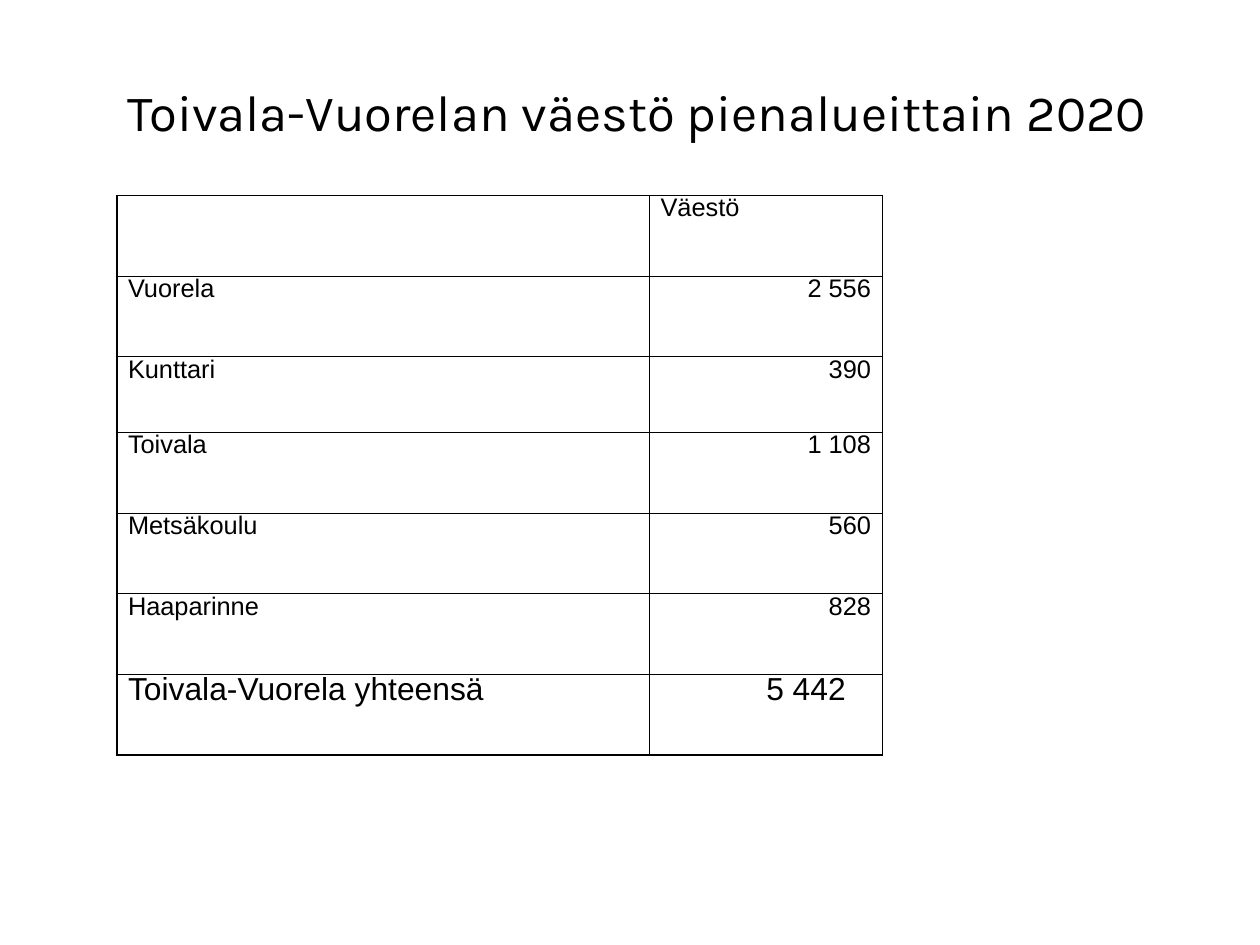
from dataclasses import dataclass

import lxml.etree
import pptx
import pptx.dml.color
import pptx.enum.text
import pptx.oxml.ns
import pptx.util

ALIGN = pptx.enum.text.PP_ALIGN
ANCHOR = pptx.enum.text.MSO_ANCHOR


@dataclass(frozen=True)
class Theme:
    ink: str = "000000"
    paper: str = "FFFFFF"
    title_font: str = "Karla"
    table_font: str = "Arial"
    title_size: int = 32
    row_size: int = 16
    total_size: int = 20
    border_width: float = 0.75
    outer_width: float = 1.5


THEME = Theme()
SLIDE_WIDTH = pptx.util.Cm(28)
SLIDE_HEIGHT = pptx.util.Cm(21)
LEFT = 1.02
TITLE_TOP, TITLE_WIDTH, TITLE_HEIGHT = 0.33, 9.92, 1.38
TABLE_TOP, TABLE_HEIGHT = TITLE_TOP + TITLE_HEIGHT, 4.9
COLUMNS = (4.66, 2.04)
SHORT_ROW, SHORT_ROW_HEIGHT = 2, 0.66
TOTAL_INDENT = 0.32

POPULATION = (
    ("", "Väestö"),
    ("Vuorela", "2 556"),
    ("Kunttari", "390"),
    ("Toivala", "1 108"),
    ("Metsäkoulu", "560"),
    ("Haaparinne", "828"),
    ("Toivala-Vuorela yhteensä", "5 442"),
)


def inches(*lengths):
    return [pptx.util.Inches(length) for length in lengths]


def color(value):
    return pptx.dml.color.RGBColor.from_string(value)


def write(frame, text, *, font, size, spacing, align=ALIGN.LEFT):
    paragraph = frame.paragraphs[0]
    paragraph.alignment = align
    paragraph.line_spacing = spacing
    run = paragraph.add_run()
    run.text = text
    run.font.name = font
    run.font.size = pptx.util.Pt(size)
    run.font.color.rgb = color(THEME.ink)


def set_margins(target, left, right, top, bottom):
    target.margin_left, target.margin_right = inches(left, right)
    target.margin_top, target.margin_bottom = inches(top, bottom)


def add_title(slide, text):
    box = slide.shapes.add_textbox(
        *inches(LEFT, TITLE_TOP, TITLE_WIDTH, TITLE_HEIGHT)
    )
    frame = box.text_frame
    frame.word_wrap = True
    frame.vertical_anchor = ANCHOR.MIDDLE
    set_margins(frame, 0.1, 0.1, 0.03, 0.05)
    write(frame, text, font=THEME.title_font, size=THEME.title_size, spacing=0.9)


def add_border(cell, side, width):
    qualified = pptx.oxml.ns.qn
    properties = cell._tc.get_or_add_tcPr()
    line = lxml.etree.SubElement(
        properties, qualified(f"a:ln{side}"), w=str(pptx.util.Pt(width))
    )
    fill = lxml.etree.SubElement(line, qualified("a:solidFill"))
    lxml.etree.SubElement(fill, qualified("a:srgbClr"), val=THEME.ink)


def format_cell(cell, is_left, is_bottom, right_margin):
    widths = {
        "L": THEME.outer_width if is_left else THEME.border_width,
        "R": THEME.border_width,
        "T": THEME.border_width,
        "B": THEME.outer_width if is_bottom else THEME.border_width,
    }
    for side, width in widths.items():
        add_border(cell, side, width)
    cell.fill.background()
    cell.vertical_anchor = ANCHOR.TOP
    set_margins(cell, 0.1, right_margin, 0.04, 0.05)


def add_population_table(slide, rows):
    row_height = (TABLE_HEIGHT - SHORT_ROW_HEIGHT) / (len(rows) - 1)
    heights = [row_height] * len(rows)
    heights[SHORT_ROW] = SHORT_ROW_HEIGHT
    frame = slide.shapes.add_table(
        len(rows), len(COLUMNS), *inches(LEFT, TABLE_TOP, sum(COLUMNS), TABLE_HEIGHT)
    )
    table = frame.table
    table.first_row = False
    table.horz_banding = False
    for column, width in zip(table.columns, inches(*COLUMNS)):
        column.width = width
    for row, height in zip(table.rows, inches(*heights)):
        row.height = height

    last = len(rows) - 1
    for row_index, values in enumerate(rows):
        for column_index, text in enumerate(values):
            cell = table.cell(row_index, column_index)
            is_total = row_index == last
            is_number = row_index > 0 and column_index > 0
            right_margin = TOTAL_INDENT if is_total and is_number else 0.1
            format_cell(cell, column_index == 0, is_total, right_margin)
            if text:
                write(
                    cell.text_frame,
                    text,
                    font=THEME.table_font,
                    size=THEME.total_size if is_total else THEME.row_size,
                    spacing=0.74,
                    align=ALIGN.RIGHT if is_number else ALIGN.LEFT,
                )


def main():
    presentation = pptx.Presentation()
    presentation.slide_width = SLIDE_WIDTH
    presentation.slide_height = SLIDE_HEIGHT
    slide = presentation.slides.add_slide(presentation.slide_layouts[6])
    slide.background.fill.solid()
    slide.background.fill.fore_color.rgb = color(THEME.paper)
    add_title(slide, "Toivala-Vuorelan väestö pienalueittain 2020")
    add_population_table(slide, POPULATION)
    presentation.save("out.pptx")


if __name__ == "__main__":
    main()
